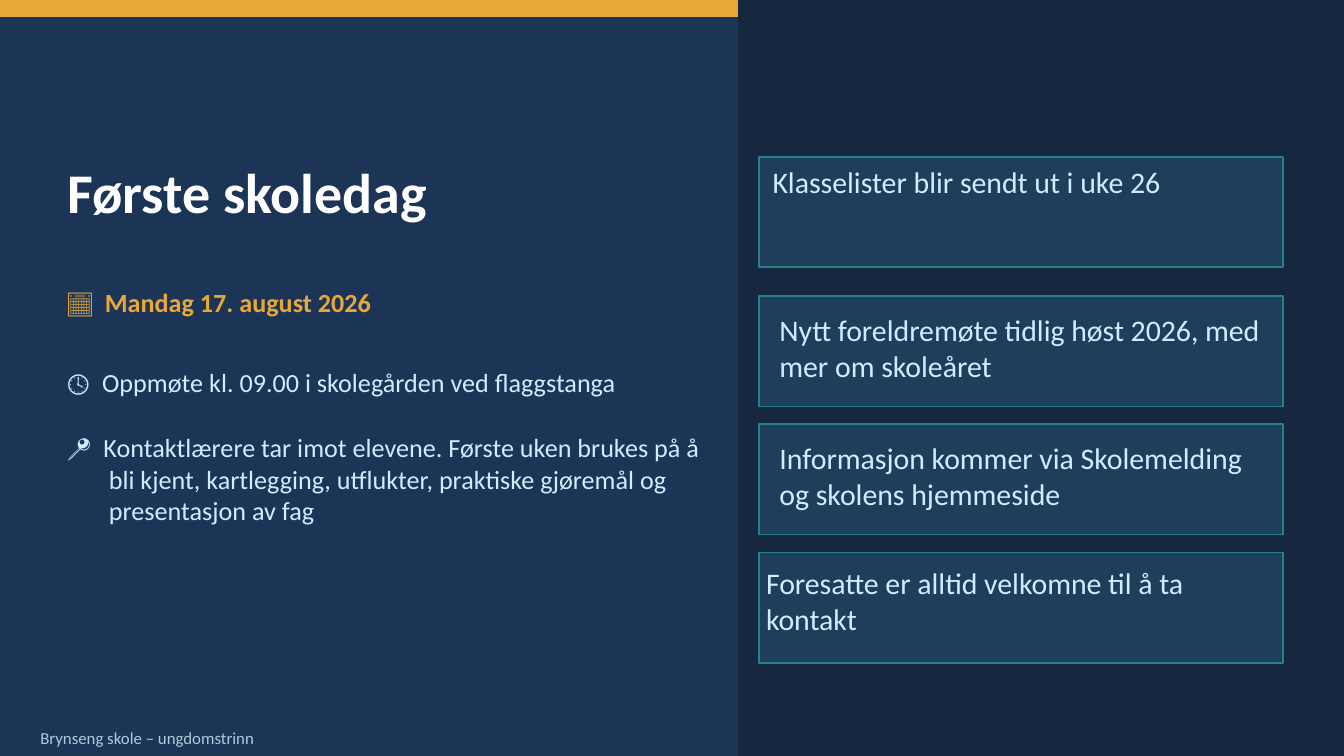
from lxml.etree import SubElement
from pptx import Presentation
from pptx.dml.color import RGBColor
from pptx.enum.shapes import MSO_SHAPE
from pptx.enum.text import MSO_ANCHOR, MSO_AUTO_SIZE, PP_ALIGN
from pptx.oxml.ns import qn
from pptx.util import Inches, Pt

COLUMNS, ROWS = 100, 56.25
CELL = Inches(0.1)
NAVY, DARK, GOLD, PALE = "1C3557", "162840", "E8A838", "CCEEFF"
CARD_FILL, CARD_EDGE = "1E3E5C", "2A7F8F"
CARD_LEFT, CARD_WIDTH, CARD_HEIGHT = 56.5, 39, 8.2
FIRST_CARD_TOP, SECOND_CARD_TOP, CARD_PITCH = 11.7, 22.05, 9.53


def color(hex_code):
    """Turn a hex string into a colour."""
    return RGBColor.from_string(hex_code)


def cells(*counts):
    """Turn grid counts into lengths."""
    return [round(count * CELL) for count in counts]


def style(paragraph, size, hex_code, bold=False):
    """Align a paragraph left and format its runs."""
    paragraph.alignment = PP_ALIGN.LEFT
    for run in paragraph.runs:
        run.font.name = "Calibri"
        run.font.size = Pt(size)
        run.font.bold = bold
        run.font.color.rgb = color(hex_code)


def set_frame(frame, anchor, insets):
    """Set wrapping, anchor and insets (left, top, right, bottom) of a frame."""
    frame.word_wrap = True
    frame.auto_size = MSO_AUTO_SIZE.NONE
    frame.vertical_anchor = anchor
    (frame.margin_left, frame.margin_top,
     frame.margin_right, frame.margin_bottom) = cells(*insets)


def add_panel(slide, box, fill, edge):
    """Add a flat rectangle on the grid."""
    panel = slide.shapes.add_shape(MSO_SHAPE.RECTANGLE, *cells(*box))
    panel.shadow.inherit = False
    panel.fill.solid()
    panel.fill.fore_color.rgb = color(fill)
    panel.line.color.rgb = color(edge)
    panel.line.width = Pt(1)
    return panel


def label(panel, text, size, hex_code, anchor, insets):
    """Write one paragraph inside a panel."""
    set_frame(panel.text_frame, anchor, insets)
    panel.text_frame.text = text
    style(panel.text_frame.paragraphs[0], size, hex_code)


def place(placeholder, box):
    """Move a placeholder to a box on the grid."""
    (placeholder.left, placeholder.top,
     placeholder.width, placeholder.height) = cells(*box)


def fill_title(slide, text):
    """Write the slide title."""
    title = slide.shapes.title
    place(title, (5, 11, 48, 6.5))
    set_frame(title.text_frame, MSO_ANCHOR.MIDDLE, (0, 0, 0, 0))
    title.text_frame.text = text
    style(title.text_frame.paragraphs[0], 30, "FFFFFF", bold=True)


def fill_details(slide, details):
    """Write the day's details, indented behind their symbols."""
    body = slide.placeholders[1]
    place(body, (5, 21.27, 48, 18.9))
    frame = body.text_frame
    set_frame(frame, MSO_ANCHOR.TOP, (0, 0, 0, 0))
    frame.text = "\n".join(text for text, *_ in details)
    for paragraph, (text, gap, indent, hex_code, bold) in zip(frame.paragraphs, details):
        properties = paragraph._p.get_or_add_pPr()
        hanging = Inches(indent)
        properties.set("marL", str(hanging))
        properties.set("indent", str(-hanging if "\t" in text else 0))
        SubElement(properties, qn("a:buNone"))
        paragraph.space_before = Pt(gap)
        style(paragraph, 14, hex_code, bold)


def add_cards(slide):
    """Add the four message cards."""
    middle, top = MSO_ANCHOR.MIDDLE, MSO_ANCHOR.TOP
    cards = [
        ("Klasselister blir sendt ut i uke 26", top, (1, 0.5, 1, 0.5)),
        ("Nytt foreldremøte tidlig høst 2026, med mer om skoleåret",
         middle, (1.5, 0.2, 1.5, 0.8)),
        ("Informasjon kommer via Skolemelding og skolens hjemmeside",
         middle, (1.5, 0.2, 1.5, 0.8)),
        ("Foresatte er alltid velkomne til å ta kontakt",
         middle, (0.5, 0, 2.5, 1)),
    ]
    tops = [FIRST_CARD_TOP] + [SECOND_CARD_TOP + CARD_PITCH * i for i in range(3)]
    for card_top, (message, anchor, insets) in zip(tops, cards):
        box = (CARD_LEFT, card_top, CARD_WIDTH, CARD_HEIGHT)
        card = add_panel(slide, box, CARD_FILL, CARD_EDGE)
        label(card, message, 16, PALE, anchor, insets)


def main():
    """Build and save the slide."""
    deck = Presentation()
    deck.slide_width, deck.slide_height = cells(COLUMNS, ROWS)
    slide = deck.slides.add_slide(deck.slide_layouts[1])
    slide.background.fill.solid()
    slide.background.fill.fore_color.rgb = color(NAVY)

    add_panel(slide, (0, 0, COLUMNS, 1.2), GOLD, GOLD)
    footer = add_panel(slide, (0, 53.5, COLUMNS, 2.75), NAVY, NAVY)
    label(footer, "Brynseng skole – ungdomstrinn", 9, "AACCDD",
          MSO_ANCHOR.MIDDLE, (3, 0, 3, 0))
    add_panel(slide, (55, 0, 45, ROWS), DARK, DARK)

    fill_title(slide, "Første skoledag")
    fill_details(slide, [
        ("📅\tMandag 17. august 2026", 0, 0.28, GOLD, True),
        ("🕓\tOppmøte kl. 09.00 i skolegården ved flaggstanga", 26.5, 0.26, PALE, False),
        ("📍\tKontaktlærere tar imot elevene. Første uken brukes på å",
         18, 0.27, PALE, False),
        ("bli kjent, kartlegging, utflukter, praktiske gjøremål og",
         0, 0.31, PALE, False),
        ("presentasjon av fag", 0, 0.31, PALE, False),
    ])
    add_cards(slide)
    deck.save("out.pptx")


if __name__ == "__main__":
    main()
